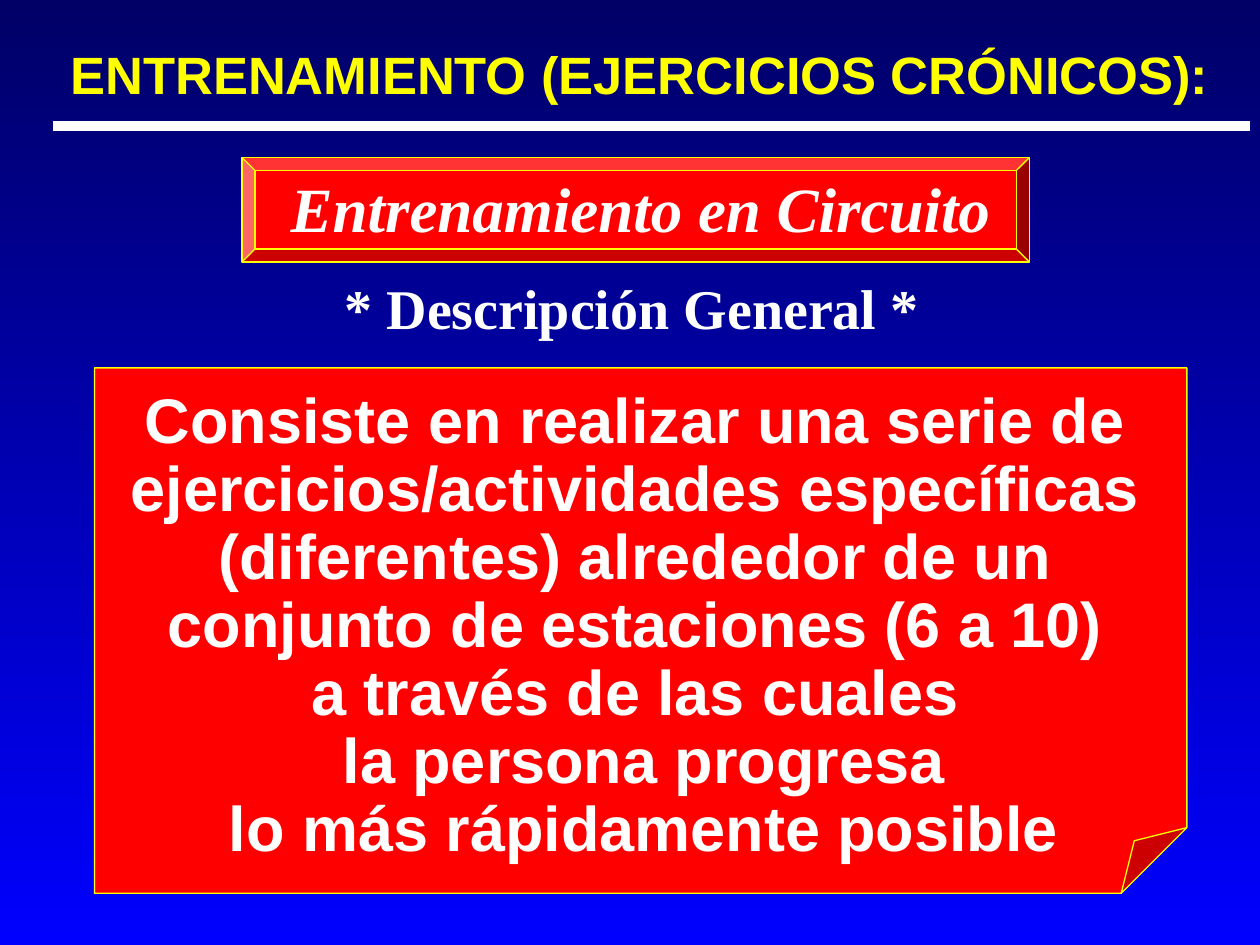
from dataclasses import dataclass

from lxml import etree
from pptx import Presentation
from pptx.dml.color import RGBColor
from pptx.enum.shapes import MSO_CONNECTOR, MSO_SHAPE
from pptx.enum.text import MSO_ANCHOR, PP_ALIGN
from pptx.oxml.ns import qn
from pptx.util import Inches, Pt

NAVY = RGBColor(0x00, 0x00, 0x66)
BLUE = RGBColor(0x00, 0x00, 0xFF)
RED = RGBColor(0xFF, 0x00, 0x00)
YELLOW = RGBColor(0xFF, 0xFF, 0x00)
WHITE = RGBColor(0xFF, 0xFF, 0xFF)


@dataclass(frozen=True)
class Box:
    left: float
    top: float
    width: float
    height: float

    def lengths(self) -> tuple:
        return tuple(Inches(v) for v in (self.left, self.top, self.width, self.height))


@dataclass(frozen=True)
class Panel:
    box: Box
    preset: MSO_SHAPE


@dataclass(frozen=True)
class Caption:
    box: Box
    text: str
    font: str
    size: int
    color: RGBColor = WHITE
    italic: bool = False
    spacing: float = 1.0
    anchor: MSO_ANCHOR = MSO_ANCHOR.TOP
    shadow: bool = False


PANELS = [
    Panel(Box(0.75, 2.92, 8.67, 4.17), MSO_SHAPE.FOLDED_CORNER),
    Panel(Box(1.92, 1.25, 6.25, 0.83), MSO_SHAPE.BEVEL),
]

HEADING = Caption(
    Box(0.33, 0.08, 9.5, 1), "ENTRENAMIENTO (EJERCICIOS CRÓNICOS):",
    "Arial", 30, YELLOW, anchor=MSO_ANCHOR.MIDDLE,
)

CAPTIONS = [
    Caption(
        Box(0.83, 3.04, 8.42, 3.88),
        "Consiste en realizar una serie de ejercicios/actividades específicas "
        "(diferentes) alrededor de un conjunto de estaciones (6 a 10)\n"
        "a través de las cuales\n"
        " la persona progresa\n"
        " lo más rápidamente posible",
        "Arial", 36, spacing=0.9,
    ),
    Caption(
        Box(1.92, 1.46, 6.33, 0.42), "Entrenamiento en Circuito",
        "Times New Roman", 36, italic=True, spacing=0.7, shadow=True,
    ),
    Caption(
        Box(2.42, 2.12, 5.08, 0.63), " * Descripción General *",
        "Times New Roman", 32,
    ),
]


def add_text_shadow(run) -> None:
    effects = etree.Element(qn("a:effectLst"))
    shadow = etree.SubElement(
        effects, qn("a:outerShdw"), dist="38100", dir="2700000", algn="tl"
    )
    etree.SubElement(shadow, qn("a:srgbClr"), val="808080")
    run.font._element.find(qn("a:solidFill")).addnext(effects)


def write_caption(holder, caption: Caption) -> None:
    holder.left, holder.top, holder.width, holder.height = caption.box.lengths()
    frame = holder.text_frame
    frame.word_wrap = True
    frame.vertical_anchor = caption.anchor
    frame.text = caption.text
    for paragraph in frame.paragraphs:
        paragraph.alignment = PP_ALIGN.CENTER
        paragraph.line_spacing = caption.spacing
        for run in paragraph.runs:
            run.font.name = caption.font
            run.font.size = Pt(caption.size)
            run.font.bold = True
            run.font.italic = caption.italic
            run.font.color.rgb = caption.color
            if caption.shadow:
                add_text_shadow(run)


def add_panel(slide, panel: Panel) -> None:
    shape = slide.shapes.add_shape(panel.preset, *panel.box.lengths())
    guides = shape._element.spPr.find(qn("a:prstGeom")).find(qn("a:avLst"))
    for guide in list(guides):
        guides.remove(guide)
    etree.SubElement(guides, qn("a:gd"), name="adj", fmla="val 12500")
    shape.shadow.inherit = False
    shape.fill.solid()
    shape.fill.fore_color.rgb = RED
    shape.line.color.rgb = YELLOW
    shape.line.width = Pt(0.75)


def add_rule(slide) -> None:
    rule = slide.shapes.add_connector(
        MSO_CONNECTOR.STRAIGHT, Inches(0.42), Inches(1), Inches(9.92), Inches(1)
    )
    rule.line.color.rgb = WHITE
    rule.line.width = Pt(6)
    etree.SubElement(rule._element.spPr, qn("a:effectLst"))


def paint_background(slide) -> None:
    fill = slide.background.fill
    fill.gradient()
    fill.gradient_angle = 270
    for stop, position, color in zip(fill.gradient_stops, (0, 1), (NAVY, BLUE)):
        stop.position = position
        stop.color.rgb = color


def main() -> None:
    deck = Presentation()
    deck.slide_width, deck.slide_height = Inches(10), Inches(7.5)
    slide = deck.slides.add_slide(deck.slide_layouts.get_by_name("Title Only"))
    paint_background(slide)
    add_rule(slide)
    for panel in PANELS:
        add_panel(slide, panel)
    for caption in CAPTIONS:
        write_caption(slide.shapes.add_textbox(*caption.box.lengths()), caption)
    write_caption(slide.shapes.title, HEADING)
    deck.save("out.pptx")


if __name__ == "__main__":
    main()
